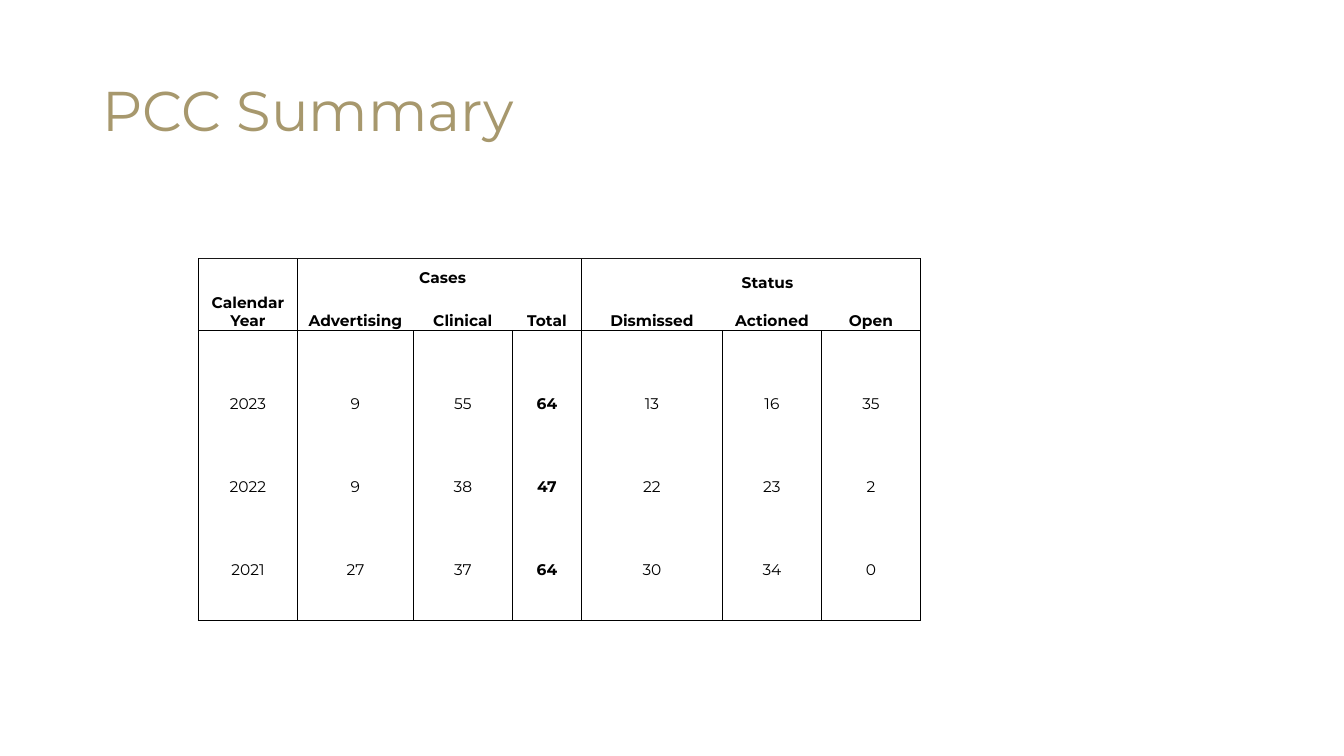
from lxml.etree import SubElement
from pptx import Presentation
from pptx.dml.color import RGBColor
from pptx.enum.shapes import MSO_CONNECTOR as Connector
from pptx.enum.text import MSO_ANCHOR as Anchor, PP_ALIGN as Align
from pptx.oxml.ns import qn
from pptx.util import Pt

# Content
TITLE = "PCC Summary"
HEADERS = ["Calendar Year", "Advertising", "Clinical", "Total",
           "Dismissed", "Actioned", "Open"]
YEARS = [
    ["2023", "9", "55", "64", "13", "16", "35"],
    ["2022", "9", "38", "47", "22", "23", "2"],
    ["2021", "27", "37", "64", "30", "34", "0"],
]
GROUPS = [("Cases", 292.3, 187.9), ("Status", 522.7, 191.5)]

# Layout, in points
TABLE_LEFT, TABLE_TOP = 141.8, 184.3
COLUMN_WIDTHS = [70.7, 82.8, 70.7, 49.4, 100.7, 70.7, 70.7]
HEADER_HEIGHT, ROW_HEIGHT = 52, 29.6
GROUP_EDGES = {0, 1, 4, 7}
TOTAL_COLUMN = 3
FONT, BLACK, GOLD, RULE = "Montserrat", "000000", "A7986D", "181717"


def color(value):
    return RGBColor.from_string(value)


def write(frame, text, size=11, ink=BLACK, bold=False, align=Align.LEFT,
          anchor=Anchor.TOP, spacing=None):
    frame.word_wrap = True
    frame.vertical_anchor = anchor
    para = frame.paragraphs[0]
    para.alignment = align
    para.line_spacing = spacing
    span = para.add_run()
    span.text = text
    span.font.name, span.font.size, span.font.bold = FONT, Pt(size), bold
    span.font.color.rgb = color(ink)


def add_text(page, text, left, top, width, height, **style):
    box = page.shapes.add_textbox(Pt(left), Pt(top), Pt(width), Pt(height))
    write(box.text_frame, text, **style)


def set_borders(cell, **sides):
    props = cell._tc.get_or_add_tcPr()
    for side in "LRTB":
        line = SubElement(props, qn(f"a:ln{side}"), w=str(Pt(1)))
        if sides[side]:
            fill = SubElement(line, qn("a:solidFill"))
            SubElement(fill, qn("a:srgbClr"), val=BLACK)
        else:
            SubElement(line, qn("a:noFill"))


deck = Presentation()
deck.slide_width, deck.slide_height = Pt(960), Pt(540)
page = deck.slides.add_slide(deck.slide_layouts[6])

# Table: a blank row stands before, between and after the years
rows = [HEADERS]
blank = [""] * len(HEADERS)
for year in YEARS:
    rows += [blank, year]
rows.append(blank)
last = len(rows) - 1
heights = [HEADER_HEIGHT] + [ROW_HEIGHT] * last
table_width = sum(COLUMN_WIDTHS)

table = page.shapes.add_table(len(rows), len(HEADERS), Pt(TABLE_LEFT), Pt(TABLE_TOP),
                              Pt(table_width), Pt(sum(heights))).table
table.first_row = table.horz_banding = False
for column, width in zip(table.columns, COLUMN_WIDTHS):
    column.width = Pt(width)
for r, (values, height) in enumerate(zip(rows, heights)):
    table.rows[r].height = Pt(height)
    for c, value in enumerate(values):
        cell = table.cell(r, c)
        cell.margin_left = cell.margin_right = Pt(5)
        cell.margin_top = cell.margin_bottom = 0
        cell.vertical_anchor = Anchor.BOTTOM
        set_borders(cell, L=r > 0 or c in GROUP_EDGES, R=r > 0 or c + 1 in GROUP_EDGES,
                    T=r == 1, B=r in (0, last))
        cell.fill.background()
        if value:
            write(cell.text_frame, value, bold=r == 0 or c == TOTAL_COLUMN,
                  align=Align.CENTER, anchor=Anchor.BOTTOM)

# Rule along the top of the table
rule = page.shapes.add_connector(Connector.STRAIGHT, Pt(TABLE_LEFT), Pt(TABLE_TOP),
                                 Pt(TABLE_LEFT + table_width), Pt(TABLE_TOP))
rule.line.color.rgb = color(RULE)
rule.line.width = Pt(0.5)
SubElement(rule._element.spPr, qn("a:effectLst"))

# Title and column group labels
add_text(page, TITLE, 66, 28.8, 828, 104.4, size=40, ink=GOLD,
         anchor=Anchor.MIDDLE, spacing=0.9)
for label, left, top in GROUPS:
    add_text(page, label, left, top, 61.2, 20.9, bold=True)

deck.save("out.pptx")
